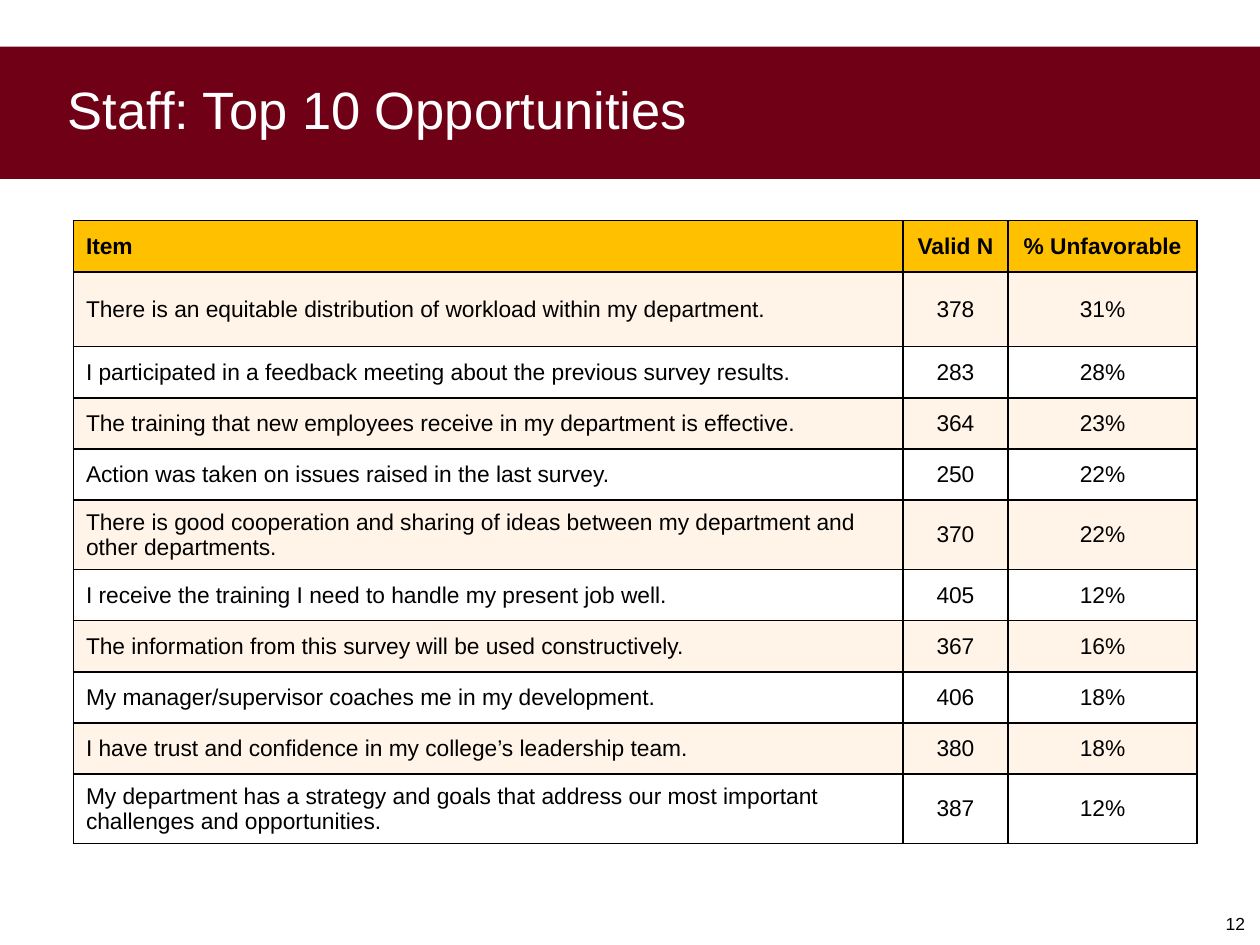
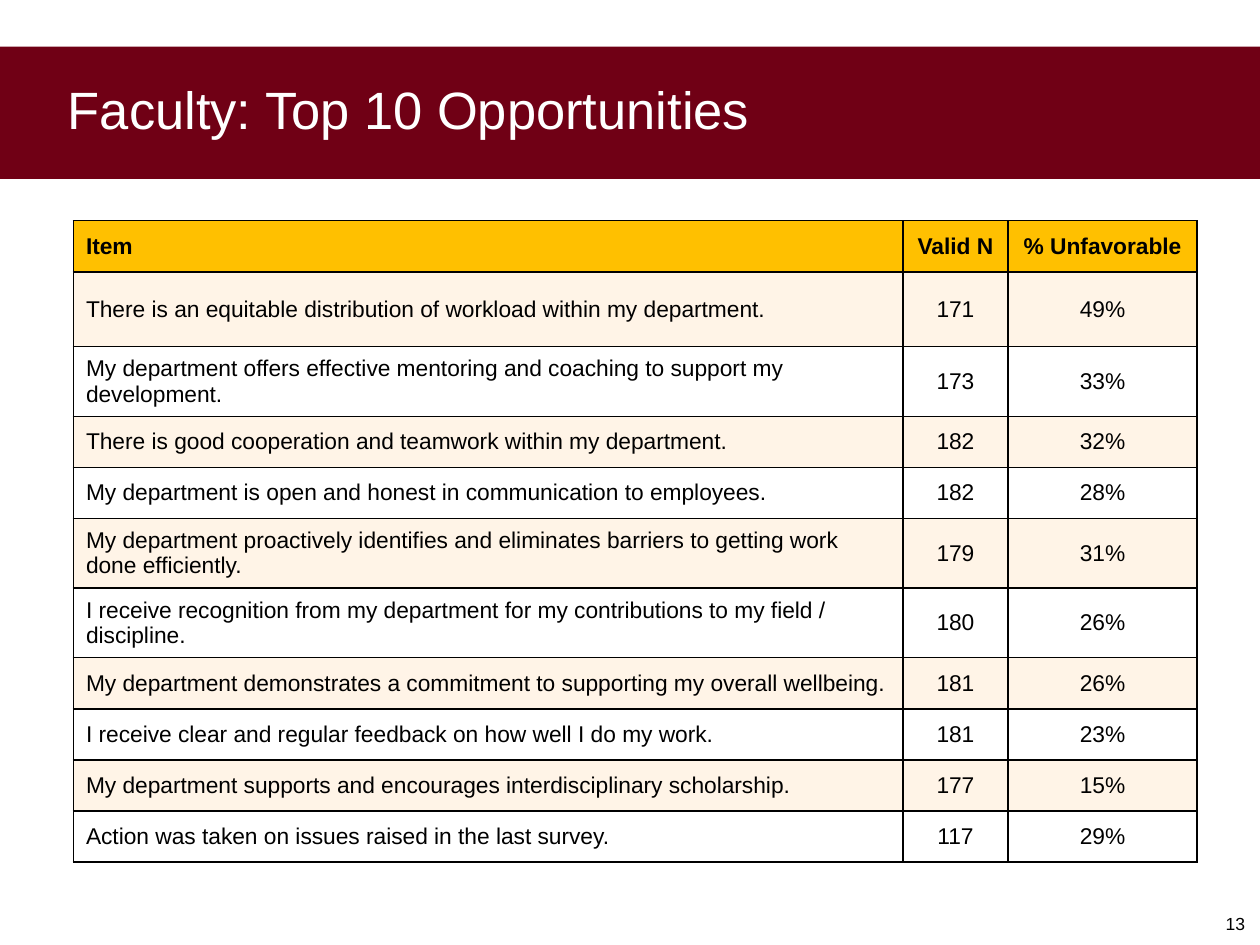
from dataclasses import dataclass
from typing import NamedTuple

from lxml.etree import SubElement
from pptx import Presentation
from pptx.dml.color import RGBColor
from pptx.enum.shapes import MSO_SHAPE
from pptx.enum.text import MSO_ANCHOR as Anchor, PP_ALIGN as Align
from pptx.oxml.ns import qn
from pptx.util import Cm, Pt

MAROON = RGBColor(0x70, 0x00, 0x15)
GOLD = RGBColor(0xFF, 0xC0, 0x00)
CREAM = RGBColor(0xFF, 0xF4, 0xE7)
WHITE = RGBColor(0xFF, 0xFF, 0xFF)
BLACK = RGBColor(0x00, 0x00, 0x00)
FONT = "Arial"

SLIDE_WIDTH, SLIDE_HEIGHT = Cm(25.4), Cm(19.05)
TABLE_LEFT, TABLE_TOP = Cm(1.48), Cm(4.45)
COLUMN_WIDTHS = (Cm(16.72), Cm(2.12), Cm(3.81))
ROW_HEIGHT, FIRST_ITEM_HEIGHT = Cm(1.03), Cm(1.51)
CELL_PADDING = Cm(0.15)
HEADINGS = ("Item", "Valid N", "% Unfavorable")


class Item(NamedTuple):
    statement: str
    valid_n: int
    unfavorable: int


class Box(NamedTuple):
    left: int
    top: int
    width: int
    height: int


@dataclass(frozen=True)
class SurveySlide:
    number: int
    group: str
    items: tuple[Item, ...]


BAND_BOX = Box(Cm(0), Cm(0.94), SLIDE_WIDTH, Cm(2.67))
TITLE_BOX = Box(Cm(1.12), Cm(1.55), Cm(21.1), Cm(1.42))
NUMBER_BOX = Box(Cm(24.46), Cm(18.29), Cm(1.9), Cm(0.69))

SURVEY_SLIDES = (
    SurveySlide(12, "Staff", (
        Item("There is an equitable distribution of workload within my department.", 378, 31),
        Item("I participated in a feedback meeting about the previous survey results.", 283, 28),
        Item("The training that new employees receive in my department is effective.", 364, 23),
        Item("Action was taken on issues raised in the last survey.", 250, 22),
        Item("There is good cooperation and sharing of ideas between my department and "
             "other departments.", 370, 22),
        Item("I receive the training I need to handle my present job well.", 405, 12),
        Item("The information from this survey will be used constructively.", 367, 16),
        Item("My manager/supervisor coaches me in my development.", 406, 18),
        Item("I have trust and confidence in my college’s leadership team.", 380, 18),
        Item("My department has a strategy and goals that address our most important "
             "challenges and opportunities.", 387, 12),
    )),
    SurveySlide(13, "Faculty", (
        Item("There is an equitable distribution of workload within my department.", 171, 49),
        Item("My department offers effective mentoring and coaching to support my "
             "development.", 173, 33),
        Item("There is good cooperation and teamwork within my department.", 182, 32),
        Item("My department is open and honest in communication to employees.", 182, 28),
        Item("My department proactively identifies and eliminates barriers to getting work "
             "done efficiently.", 179, 31),
        Item("I receive recognition from my department for my contributions to my field / "
             "discipline.", 180, 26),
        Item("My department demonstrates a commitment to supporting my overall wellbeing.",
             181, 26),
        Item("I receive clear and regular feedback on how well I do my work.", 181, 23),
        Item("My department supports and encourages interdisciplinary scholarship.", 177, 15),
        Item("Action was taken on issues raised in the last survey.", 117, 29),
    )),
)


def add_run(paragraph, text: str, size: float, color: RGBColor, bold: bool = False) -> None:
    run = paragraph.add_run()
    run.text = text
    run.font.name = FONT
    run.font.size = Pt(size)
    run.font.bold = bold
    run.font.color.rgb = color


def add_text(slide, box: Box, text: str, size: float, color: RGBColor, anchor: Anchor):
    frame = slide.shapes.add_textbox(*box).text_frame
    frame.word_wrap = True
    frame.vertical_anchor = anchor
    paragraph = frame.paragraphs[0]
    add_run(paragraph, text, size, color)
    return paragraph


def add_frame(slide, title: str, number: int) -> None:
    """Slide number, title band and title."""
    add_text(slide, NUMBER_BOX, str(number), 10, BLACK, Anchor.TOP)
    band = slide.shapes.add_shape(MSO_SHAPE.RECTANGLE, *BAND_BOX)
    band.shadow.inherit = False
    band.fill.solid()
    band.fill.fore_color.rgb = MAROON
    band.line.fill.background()
    add_text(slide, TITLE_BOX, title, 30, WHITE, Anchor.BOTTOM).line_spacing = 0.9


def add_borders(cell) -> None:
    properties = cell._tc.get_or_add_tcPr()
    for side in ("a:lnL", "a:lnR", "a:lnT", "a:lnB"):
        line = SubElement(properties, qn(side), w=str(Pt(1)))
        fill = SubElement(line, qn("a:solidFill"))
        SubElement(fill, qn("a:srgbClr"), val=str(BLACK))


def fill_cell(cell, text: str, color: RGBColor, align: Align, bold: bool) -> None:
    add_borders(cell)
    cell.fill.solid()
    cell.fill.fore_color.rgb = color
    cell.vertical_anchor = Anchor.MIDDLE
    cell.margin_top = cell.margin_bottom = CELL_PADDING
    paragraph = cell.text_frame.paragraphs[0]
    paragraph.alignment = align
    add_run(paragraph, text, 13, BLACK, bold)


def add_item_table(slide, items: tuple[Item, ...]) -> None:
    rows = [HEADINGS] + [
        (item.statement, str(item.valid_n), f"{item.unfavorable}%") for item in items
    ]
    height = ROW_HEIGHT * len(items) + FIRST_ITEM_HEIGHT
    table = slide.shapes.add_table(
        len(rows), len(HEADINGS), TABLE_LEFT, TABLE_TOP, sum(COLUMN_WIDTHS), height
    ).table
    table.horz_banding = False
    for column, width in zip(table.columns, COLUMN_WIDTHS):
        column.width = width

    # Gold header, then alternating cream and white rows
    for row_index, texts in enumerate(rows):
        is_header = row_index == 0
        color = GOLD if is_header else (WHITE, CREAM)[row_index % 2]
        table.rows[row_index].height = FIRST_ITEM_HEIGHT if row_index == 1 else ROW_HEIGHT
        for column_index, text in enumerate(texts):
            align = Align.CENTER if column_index else Align.LEFT
            fill_cell(table.cell(row_index, column_index), text, color, align, is_header)


def main() -> None:
    presentation = Presentation()
    presentation.slide_width = SLIDE_WIDTH
    presentation.slide_height = SLIDE_HEIGHT
    blank_layout = presentation.slide_layouts[6]
    for survey in SURVEY_SLIDES:
        slide = presentation.slides.add_slide(blank_layout)
        add_frame(slide, f"{survey.group}: Top 10 Opportunities", survey.number)
        add_item_table(slide, survey.items)
    presentation.save("out.pptx")


if __name__ == "__main__":
    main()
